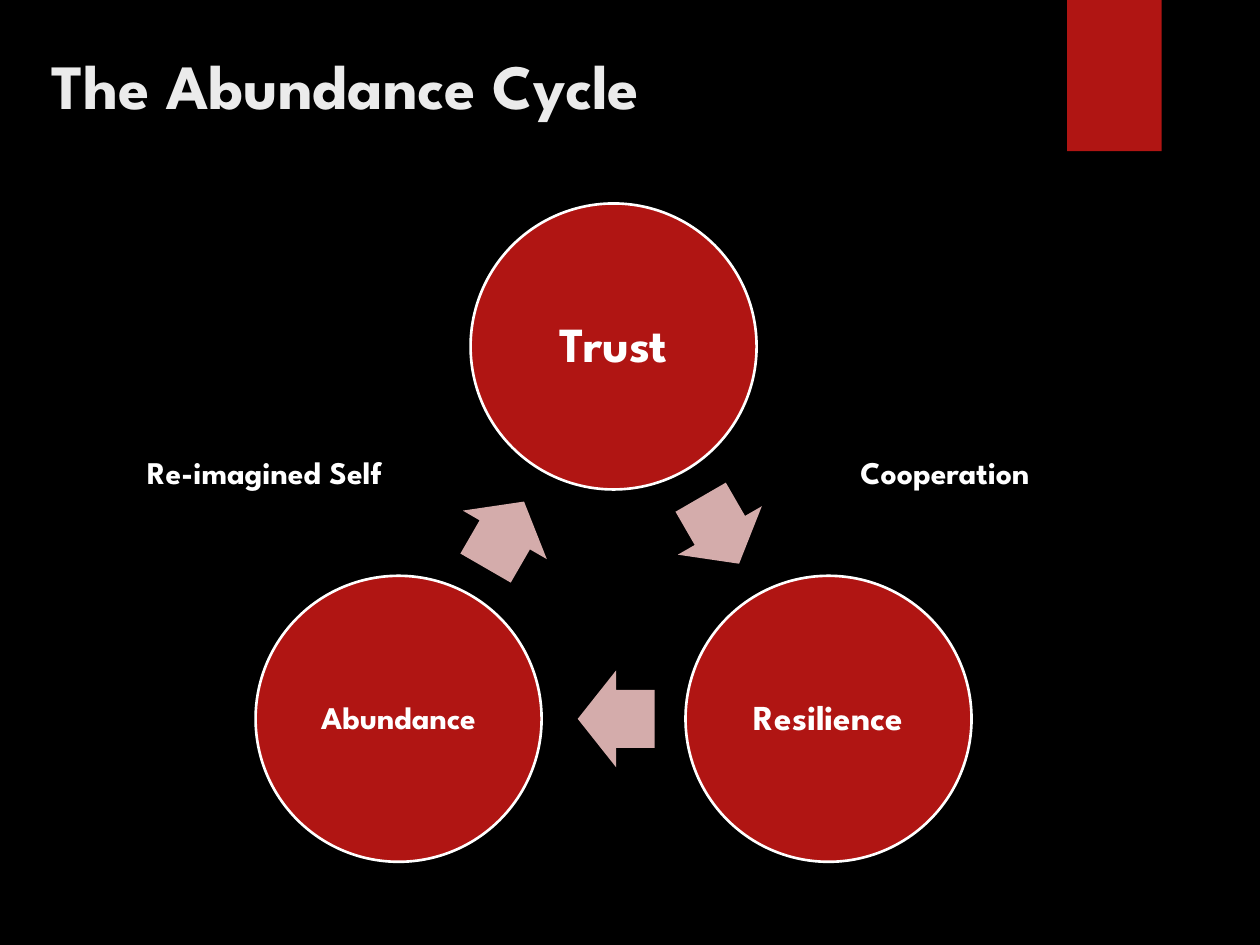
from math import cos, radians, sin

from pptx import Presentation
from pptx.dml.color import RGBColor
from pptx.enum.shapes import MSO_SHAPE
from pptx.enum.text import MSO_ANCHOR, PP_ALIGN
from pptx.util import Inches, Pt

FONT = "League Spartan"
COLORS = {
    "back": "000000",
    "red": "B01513",
    "pink": "D4ACAB",
    "white": "FFFFFF",
    "title": "EBEBEB",
}
MID_X, MID_Y = 4.87, 4.72  # centre of the cycle
RING = 1.97                # from the centre to each circle's centre
SIZE = 2.27                # circle diameter
STEPS = [("Trust", 28), ("Resilience", 20), ("Abundance", 18)]


def color(name):
    return RGBColor.from_string(COLORS[name])


def add_run(para, text, size, shade="white"):
    run = para.add_run()
    run.text = text
    font = run.font
    font.name, font.size, font.bold = FONT, Pt(size), True
    font.color.rgb = color(shade)


def add_label(slide, box, text, size, shade="white"):
    frame = slide.shapes.add_textbox(*map(Inches, box)).text_frame
    frame.word_wrap = True
    add_run(frame.paragraphs[0], text, size, shade)


def add_form(slide, kind, box, fill):
    """Add a flat preset shape without an outline."""
    shape = slide.shapes.add_shape(kind, *map(Inches, box))
    shape.shadow.inherit = False
    shape.fill.solid()
    shape.fill.fore_color.rgb = color(fill)
    shape.line.fill.background()
    return shape


def add_circle(slide, x, y, text, size):
    box = (x - SIZE / 2, y - SIZE / 2, SIZE, SIZE)
    disc = add_form(slide, MSO_SHAPE.OVAL, box, "red")
    disc.line.color.rgb = color("white")
    disc.line.width = Pt(1.5)
    frame = disc.text_frame
    frame.word_wrap = True
    frame.vertical_anchor = MSO_ANCHOR.MIDDLE
    frame.margin_left = frame.margin_right = Inches(0.04)
    frame.margin_top = frame.margin_bottom = Inches(0.04)
    para = frame.paragraphs[0]
    para.alignment = PP_ALIGN.CENTER
    para.line_spacing = 0.9
    add_run(para, text, size)


def add_arrow(slide, x, y, turn):
    wide, high = 0.61, 0.77
    box = (x - wide / 2, y - high / 2, wide, high)
    arrow = add_form(slide, MSO_SHAPE.RIGHT_ARROW, box, "pink")
    arrow.adjustments[0] = 0.6
    arrow.adjustments[1] = 0.5
    arrow.rotation = turn


def add_cycle(slide):
    """Place circles clockwise from the top, each followed by an arrow."""
    for i, (text, size) in enumerate(STEPS):
        angle = radians(120 * i - 90)
        add_circle(slide, MID_X + RING * cos(angle),
                   MID_Y + RING * sin(angle), text, size)
        turn = 60 + 120 * i
        way, out = radians(turn), radians(turn - 90)
        # Midway between two circles, set back a little from the next one
        add_arrow(slide,
                  MID_X + RING / 2 * cos(out) - 0.02 * cos(way),
                  MID_Y + RING / 2 * sin(out) - 0.02 * sin(way), turn)


def main():
    deck = Presentation()
    deck.slide_width, deck.slide_height = Inches(10), Inches(7.5)
    slide = deck.slides.add_slide(deck.slide_layouts[6])
    slide.background.fill.solid()
    slide.background.fill.fore_color.rgb = color("back")

    add_form(slide, MSO_SHAPE.RECTANGLE, (8.47, 0, 0.75, 1.2), "red")
    add_label(slide, (0.31, 0.32, 7.79, 1), "The Abundance Cycle", 36, "title")
    add_cycle(slide)
    add_label(slide, (6.73, 3.55, 2.17, 0.4), "Cooperation", 18)
    add_label(slide, (1.07, 3.55, 2.56, 0.4), "Re-imagined Self", 18)
    deck.save("out.pptx")


if __name__ == "__main__":
    main()
